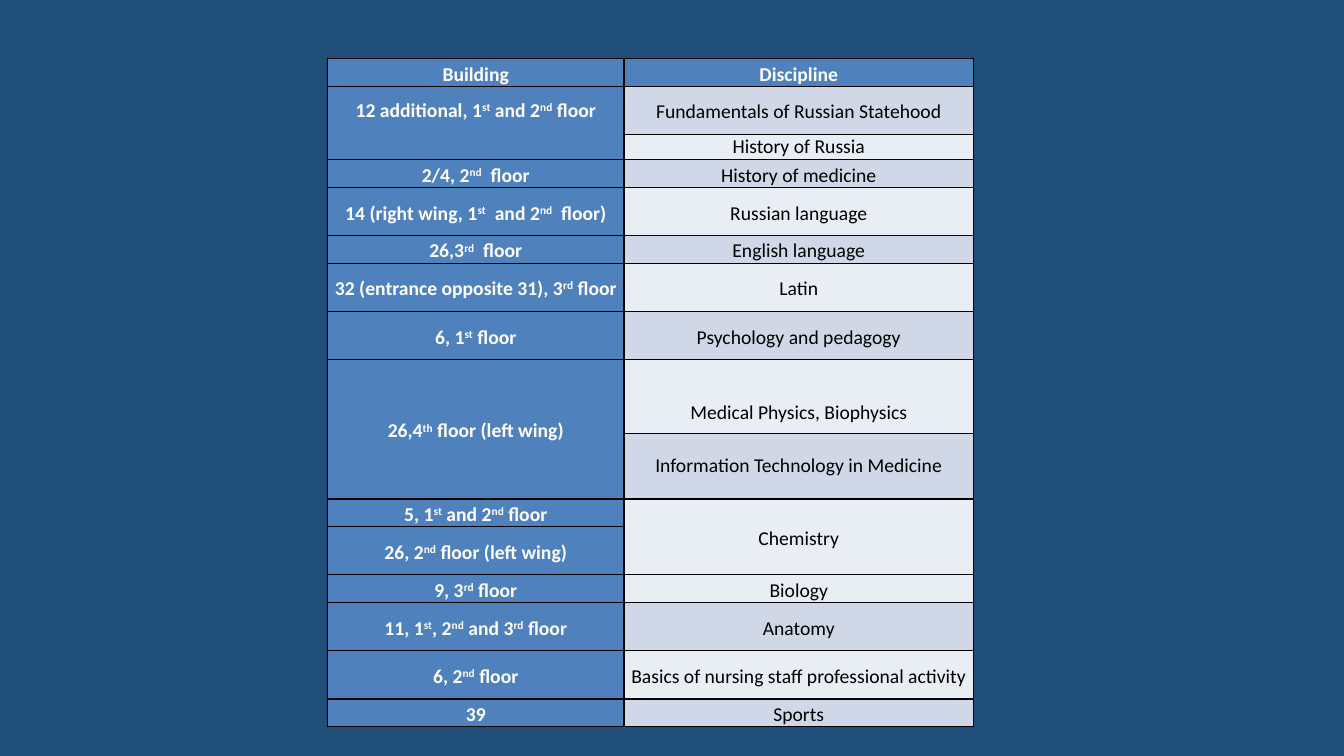
from dataclasses import dataclass
from typing import Optional

from lxml.etree import SubElement
from pptx import Presentation
from pptx.dml.color import RGBColor
from pptx.enum.text import MSO_ANCHOR as Anchor, PP_ALIGN as Align
from pptx.oxml.ns import qn
from pptx.table import _Cell as Cell
from pptx.util import Inches, Length, Pt

NAVY = RGBColor(0x1F, 0x4E, 0x79)
BLUE = RGBColor(0x4F, 0x81, 0xBD)
BAND_DARK = RGBColor(0xD0, 0xD8, 0xE8)
BAND_LIGHT = RGBColor(0xE9, 0xED, 0xF4)
WHITE = RGBColor(0xFF, 0xFF, 0xFF)
BLACK = RGBColor(0x00, 0x00, 0x00)

# The slide is a grid of 160 columns by 90 rows of square units
UNIT = Inches(1) / 12
SIDE_INSET = 0.5
LINE = 3.3  # one line of text
COLUMN_WIDTHS = (35.28, 41.64)
SINGLE, DOUBLE = 2.76, 5.76


@dataclass(frozen=True)
class Entry:
    """A row; None continues the cell above, ^ encloses a superscript."""
    height: float
    building: Optional[str]
    discipline: Optional[str]
    below_building: float = 0
    above_discipline: float = 0


ENTRIES = (
    Entry(SINGLE, "Building", "Discipline"),
    Entry(DOUBLE, "12 additional, 1^st^ and 2^nd^ floor",
          "Fundamentals of Russian Statehood", below_building=LINE),
    Entry(3, None, "History of Russia"),
    Entry(3.12, "2/4, 2^nd^  floor", "History of medicine"),
    Entry(DOUBLE, "14 (right wing, 1^st^  and 2^nd^  floor)", "Russian language"),
    Entry(SINGLE, "26,3^rd^  floor", "English language"),
    Entry(DOUBLE, "32 (entrance opposite 31), 3^rd^ floor", "Latin"),
    Entry(DOUBLE, "6, 1^st^ floor", "Psychology and pedagogy"),
    Entry(8.76, "26,4^th^ floor (left wing)", "Medical Physics, Biophysics",
          above_discipline=LINE),
    Entry(7.8, None, "Information Technology in Medicine"),
    Entry(3.12, "5, 1^st^ and 2^nd^ floor", "Chemistry"),
    Entry(DOUBLE, "26, 2^nd^ floor (left wing)", None),
    Entry(SINGLE, "9, 3^rd^ floor", "Biology"),
    Entry(DOUBLE, "11, 1^st^, 2^nd^ and 3^rd^ floor", "Anatomy"),
    Entry(DOUBLE, "6, 2^nd^ floor", "Basics of nursing staff professional activity"),
    Entry(SINGLE, "39", "Sports"),
)


def units(count: float) -> Length:
    return Length(round(count * UNIT))


def write(cell: Cell, text: str, *, color: RGBColor, bold: bool,
          spacing: float = 1.15, after: float = 0) -> None:
    paragraph = cell.text_frame.paragraphs[0]
    paragraph.alignment = Align.CENTER
    paragraph.line_spacing = spacing
    paragraph.space_after = Pt(after)
    for index, part in enumerate(text.split("^")):
        run = paragraph.add_run()
        run.text = part
        run.font.name, run.font.size = "Calibri", Pt(14)
        run.font.bold, run.font.color.rgb = bold, color
        if index % 2:
            run._r.get_or_add_rPr().set("baseline", "30000")


def dress(cell: Cell, fill: RGBColor, above: float = 0, below: float = 0) -> None:
    """Set the insets, borders and fill of a cell."""
    cell.vertical_anchor = Anchor.MIDDLE
    cell.margin_left = cell.margin_right = units(SIDE_INSET)
    cell.margin_top, cell.margin_bottom = units(above), units(below)
    properties = cell._tc.get_or_add_tcPr()
    for side in ("lnL", "lnR", "lnT", "lnB"):
        border = SubElement(properties, qn(f"a:{side}"), w=str(Pt(1)))
        paint = SubElement(border, qn("a:solidFill"))
        SubElement(paint, qn("a:srgbClr"), val=str(BLACK))
    cell.fill.solid()
    cell.fill.fore_color.rgb = fill


def main() -> None:
    deck = Presentation()
    deck.slide_width, deck.slide_height = units(160), units(90)
    slide = deck.slides.add_slide(deck.slide_layouts[6])
    slide.background.fill.solid()
    slide.background.fill.fore_color.rgb = NAVY

    # Timetable of buildings and disciplines
    schedule = slide.shapes.add_table(
        len(ENTRIES), len(COLUMN_WIDTHS), units(39), units(7),
        units(sum(COLUMN_WIDTHS)), units(sum(e.height for e in ENTRIES))).table
    for column, width in zip(schedule.columns, COLUMN_WIDTHS):
        column.width = units(width)

    for number, entry in enumerate(ENTRIES):
        schedule.rows[number].height = units(entry.height)
        building, discipline = schedule.cell(number, 0), schedule.cell(number, 1)
        header = number == 0
        band = BLUE if header else BAND_DARK if number % 2 else BAND_LIGHT
        dress(building, BLUE, below=entry.below_building)
        dress(discipline, band, above=entry.above_discipline)

        # Join a continued cell with the one above it
        if entry.building is None:
            schedule.cell(number - 1, 0).merge(building)
        else:
            write(building, entry.building, color=WHITE, bold=True)
        if entry.discipline is None:
            schedule.cell(number - 1, 1).merge(discipline)
        else:
            continued = entry.building is None
            write(discipline, entry.discipline, bold=header,
                  color=WHITE if header else BLACK,
                  spacing=1.0 if continued else 1.15, after=17 if continued else 0)

    deck.save("out.pptx")


if __name__ == "__main__":
    main()
